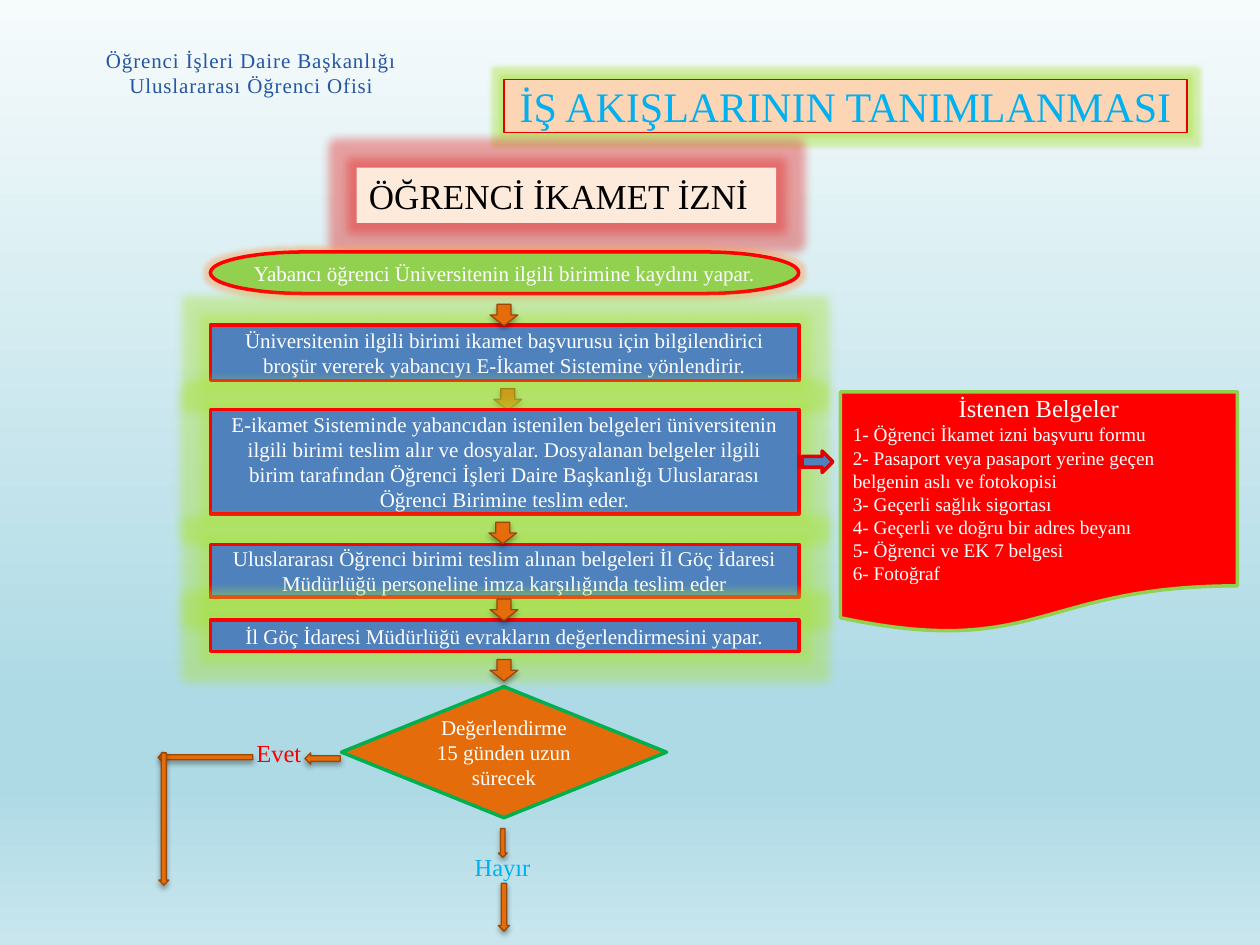
from lxml.etree import SubElement as Sub
from pptx import Presentation
from pptx.dml.color import RGBColor as RGB
from pptx.enum.shapes import MSO_SHAPE as Kind
from pptx.enum.text import MSO_ANCHOR as Anchor, PP_ALIGN as Align
from pptx.oxml.ns import qn
from pptx.util import Inches, Pt

FONT = "Times New Roman"
WHITE = RGB(0xFF, 0xFF, 0xFF)
BLACK = RGB(0, 0, 0)
NAVY = RGB(0x25, 0x55, 0xA6)
SKY = RGB(0x00, 0xB0, 0xF0)
BLUE = RGB(0x4F, 0x81, 0xBD)
RED = RGB(0xFF, 0, 0)
EDGE = RGB(0xFE, 0, 0)
DARK = RGB(0xE2, 0, 0)
PEACH = RGB(0xFC, 0xD5, 0xB5)
CREAM = RGB(0xFD, 0xEA, 0xDA)
LIME = RGB(0x92, 0xD0, 0x50)
GREEN = RGB(0x00, 0xB0, 0x50)
ORANGE = RGB(0xE4, 0x6C, 0x0A)
BROWN = RGB(0x98, 0x48, 0x07)
GLOW_LIME = RGB(0xA9, 0xE2, 0x32)
GLOW_RED = RGB(0xE4, 0x20, 0x1C)
GLOW_ORANGE = RGB(0xFF, 0x96, 0x40)
SKY_STOPS = [(0, "F6FBFC"), (74, "AEDAE5"), (83, "AEDAE5"), (100, "C9E6EE")]

# Process steps: top, height, text
STEPS = [
    (2.58, 0.44, "Üniversitenin ilgili birimi ikamet başvurusu için bilgilendirici "
     "broşür vererek yabancıyı E-İkamet Sistemine yönlendirir."),
    (3.25, 0.83, "E-ikamet Sisteminde yabancıdan istenilen belgeleri üniversitenin "
     "ilgili birimi teslim alır ve dosyalar. Dosyalanan belgeler ilgili birim "
     "tarafından Öğrenci İşleri Daire Başkanlığı Uluslararası Öğrenci Birimine "
     "teslim eder."),
    (4.32, 0.42, "Uluslararası Öğrenci birimi teslim alınan belgeleri İl Göç İdaresi "
     "Müdürlüğü personeline imza karşılığında teslim eder"),
    (4.92, 0.25, "İl Göç İdaresi Müdürlüğü evrakların değerlendirmesini yapar."),
]
PAPERS = [
    "1- Öğrenci İkamet izni başvuru formu",
    "2- Pasaport veya pasaport yerine geçen\vbelgenin aslı ve fotokopisi",
    "3- Geçerli sağlık sigortası",
    "4- Geçerli ve doğru bir adres beyanı",
    "5- Öğrenci ve EK 7 belgesi",
    "6- Fotoğraf",
]


def paint(slide):
    """Vertical gradient behind the whole slide."""
    fill = slide.background.fill
    fill.gradient()
    fill.gradient_angle = 270
    stops = next(slide.element.iter(qn("a:gsLst")))
    for old in list(stops):
        stops.remove(old)
    for pos, color in SKY_STOPS:
        stop = Sub(stops, qn("a:gs"), pos=str(pos * 1000))
        Sub(stop, qn("a:srgbClr"), val=color)


def effect(shape, tag, color, alpha, **attrs):
    """Add a glow or a shadow to a shape."""
    effects = shape.element.spPr.find(qn("a:effectLst"))
    item = Sub(effects, qn(tag), {k: str(v) for k, v in attrs.items()})
    tint = Sub(item, qn("a:srgbClr"), val=str(color))
    Sub(tint, qn("a:alpha"), val=str(alpha * 1000))


def glow(shape, color, size):
    effect(shape, "a:glow", color, 40, rad=Pt(size))


def block(slide, kind, box, fill, edge=None, width=2):
    shape = slide.shapes.add_shape(kind, *map(Inches, box))
    shape.shadow.inherit = False
    shape.fill.solid()
    shape.fill.fore_color.rgb = fill
    if edge is None:
        shape.line.fill.background()
    else:
        shape.line.color.rgb = edge
        shape.line.width = Pt(width)
    return shape


def style(par, size, color, align):
    par.alignment = align
    par.font.name = FONT
    par.font.size = Pt(size)
    par.font.color.rgb = color


def write(shape, text, size=12, color=WHITE, align=Align.CENTER):
    frame = shape.text_frame
    frame.word_wrap = True
    frame.vertical_anchor = Anchor.MIDDLE
    par = frame.paragraphs[0]
    par.text = text
    style(par, size, color, align)
    return frame


def label(slide, box, text, size, color, align):
    return write(slide.shapes.add_textbox(*map(Inches, box)), text, size, color, align)


def arrow(slide, x, y, length, thick, turn=90):
    """Orange arrow around the centre (x, y)."""
    box = (x - length / 2, y - thick / 2, length, thick)
    shape = block(slide, Kind.RIGHT_ARROW, box, ORANGE, BROWN, 0.75)
    shape.rotation = turn
    effect(shape, "a:outerShdw", BLACK, 35, blurRad=Pt(3.1), dist=Pt(1.8),
           dir=5400000, rotWithShape=0)


def heads(slide):
    # Office name
    frame = label(slide, (0.73, 0.33, 2.53, 0.5),
                  "Öğrenci İşleri Daire Başkanlığı\vUluslararası Öğrenci Ofisi",
                  12, NAVY, Align.CENTER)
    frame.word_wrap = False
    frame.vertical_anchor = Anchor.TOP
    for font in frame.paragraphs[0]._p.iter(qn("a:defRPr")):
        font.set("spc", "50")

    # Title and subject
    title = block(slide, Kind.RECTANGLE, (4, 0.63, 5.42, 0.42), PEACH, DARK, 0.75)
    glow(title, GLOW_LIME, 5)
    write(title, "İŞ AKIŞLARININ TANIMLANMASI", 24, SKY)
    topic = block(slide, Kind.RECTANGLE, (2.83, 1.33, 3.33, 0.44), CREAM)
    glow(topic, GLOW_RED, 11)
    write(topic, "ÖĞRENCİ İKAMET İZNİ", 20, BLACK, Align.LEFT)


def flow(slide):
    # Start
    start = block(slide, Kind.FLOWCHART_TERMINATOR, (1.67, 2, 4.67, 0.33), LIME, EDGE)
    glow(start, GLOW_ORANGE, 5)
    write(start, "Yabancı öğrenci Üniversitenin ilgili birimine kaydını yapar.")

    # Steps; the first link lies under the second step's glow
    for i, (top, high, text) in enumerate(STEPS):
        if i == 1:
            arrow(slide, 4.03, 3.17, 0.17, 0.22)
        step = block(slide, Kind.RECTANGLE, (1.67, top, 4.67, high), BLUE, EDGE)
        glow(step, GLOW_LIME, 11)
        write(step, text)

    # Decision
    choice = block(slide, Kind.FLOWCHART_DECISION, (2.71, 5.45, 2.58, 1.04), ORANGE, GREEN)
    write(choice, "Değerlendirme 15 günden uzun sürecek")

    # Links between the steps
    for x, y in [(4, 2.5), (3.99, 4.23), (4, 4.84), (4, 5.32)]:
        arrow(slide, x, y, 0.17, 0.22)


def papers(slide):
    block(slide, Kind.STRIPED_RIGHT_ARROW, (6.34, 3.58, 0.27, 0.17), BLUE, DARK)
    sheet = block(slide, Kind.FLOWCHART_DOCUMENT, (6.67, 3.11, 3.15, 1.92), RED, LIME)
    frame = write(sheet, "İstenen Belgeler", 14)
    for text in PAPERS:
        par = frame.add_paragraph()
        par.text = text
        style(par, 11, WHITE, Align.LEFT)


def exits(slide):
    # No: down
    arrow(slide, 3.99, 6.69, 0.23, 0.07)
    no = label(slide, (3.62, 6.66, 0.75, 0.44), "Hayır", 14, SKY, Align.RIGHT)
    no.margin_right = Inches(0.16)
    arrow(slide, 4, 7.2, 0.38, 0.09)

    # Yes: left, then down
    arrow(slide, 2.56, 6.02, 0.28, 0.09, 180)
    label(slide, (1.88, 5.75, 0.61, 0.44), "Evet", 14, RED, Align.RIGHT)
    arrow(slide, 1.63, 6.01, 0.75, 0.08, 180)
    arrow(slide, 1.3, 6.5, 1.05, 0.08)


def main():
    deck = Presentation()
    deck.slide_width, deck.slide_height = Inches(10), Inches(7.5)
    slide = deck.slides.add_slide(deck.slide_layouts[6])
    paint(slide)
    heads(slide)
    flow(slide)
    papers(slide)
    exits(slide)
    deck.save("out.pptx")


if __name__ == "__main__":
    main()
